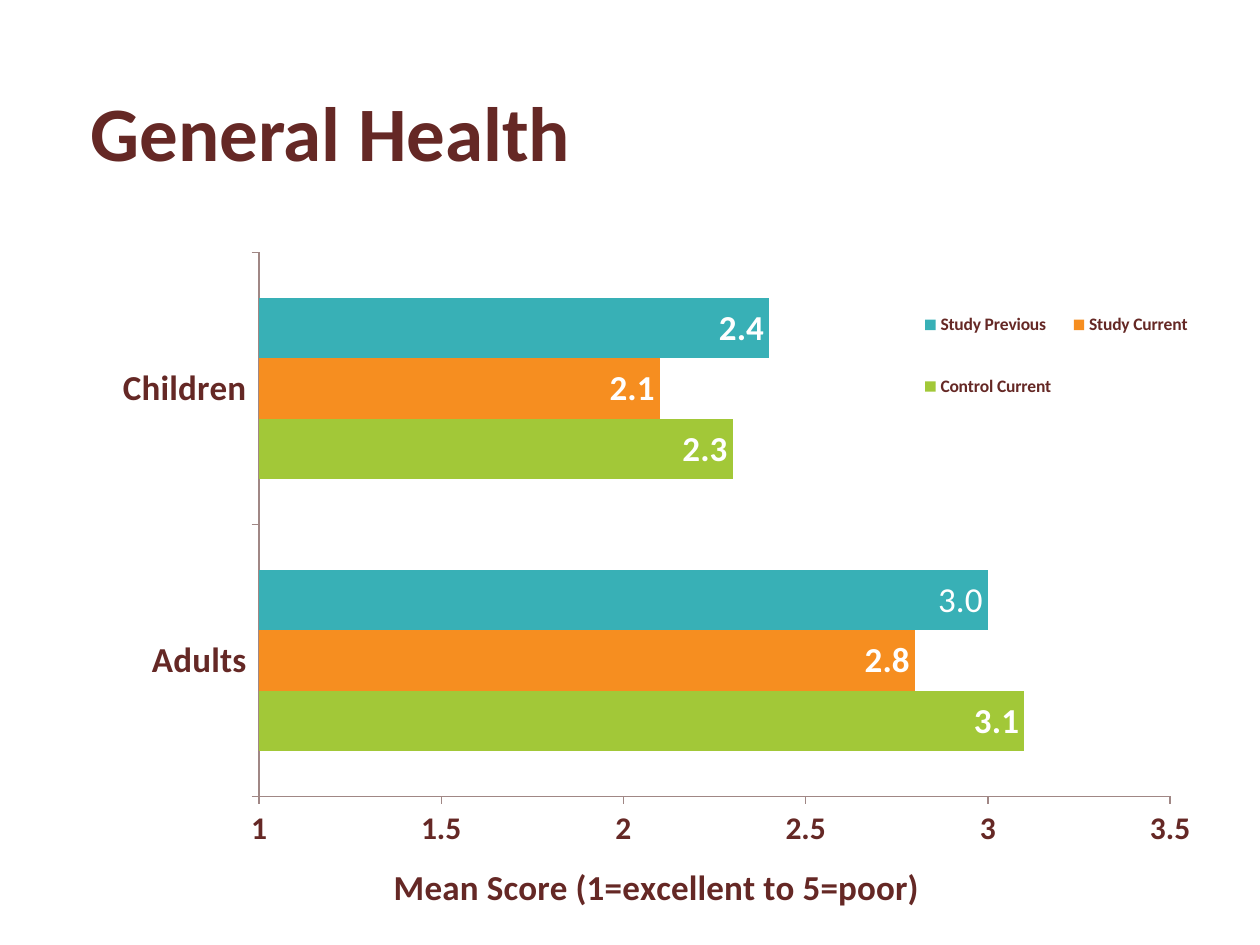
from pptx import Presentation
from pptx.chart.data import CategoryChartData
from pptx.dml.color import RGBColor
from pptx.enum import chart as c, text
from pptx.oxml import parse_xml
from pptx.oxml.ns import nsdecls, qn
from pptx.util import Cm, Pt

FONT = "Calibri"
COLORS = {
    "text": "652825",
    "axis": "A08785",
    "label": "FFFFFF",
    "Control Current": "A2C838",
    "Study Current": "F68E20",
    "Study Previous": "38B0B6",
}
SCORES = {
    "Control Current": (3.1, 2.3),
    "Study Current": (2.8, 2.1),
    "Study Previous": (3.0, 2.4),
}


def color(name):
    return RGBColor.from_string(COLORS[name])


def format_font(font, size, bold=True, color_name="text"):
    font.name = FONT
    font.size = Pt(size)
    font.bold = bold
    font.color.rgb = color(color_name)


def set_layout(element, index, x, y, width, height, inner=False):
    """Place a chart part by fractions of the chart's size."""
    for old in element.findall(qn("c:layout")):
        element.remove(old)
    target = '<c:layoutTarget val="inner"/>' if inner else ""
    element.insert(index, parse_xml(
        f'<c:layout {nsdecls("c")}><c:manualLayout>{target}'
        '<c:xMode val="edge"/><c:yMode val="edge"/>'
        f'<c:x val="{x}"/><c:y val="{y}"/><c:w val="{width}"/><c:h val="{height}"/>'
        '</c:manualLayout></c:layout>'))


def place_title(slide, left, top, width, height):
    title = slide.shapes.title
    title.left, title.top, title.width, title.height = left, top, width, height
    frame = title.text_frame
    frame.text = "General Health"
    frame.vertical_anchor = text.MSO_ANCHOR.BOTTOM
    paragraph = frame.paragraphs[0]
    paragraph.alignment = text.PP_ALIGN.LEFT
    paragraph.line_spacing = 0.9
    format_font(paragraph.runs[0].font, 44)


def format_axis(axis, size):
    axis.has_major_gridlines = False
    axis.major_tick_mark = c.XL_TICK_MARK.OUTSIDE
    axis.format.line.color.rgb = color("axis")
    axis.format.line.width = Pt(0.75)
    format_font(axis.tick_labels.font, size)


def format_series(series):
    series.format.fill.solid()
    series.format.fill.fore_color.rgb = color(series.name)
    series.invert_if_negative = False
    labels = series.data_labels
    labels.show_value = True
    labels.position = c.XL_LABEL_POSITION.INSIDE_END
    format_font(labels.font, 20, color_name="label")


def add_score_chart(slide, left, top, width, height):
    data = CategoryChartData()
    data.categories = ["Adults", "Children"]
    for name, values in SCORES.items():
        data.add_series(name, values)
    chart = slide.shapes.add_chart(
        c.XL_CHART_TYPE.BAR_CLUSTERED, left, top, width, height, data).chart
    chart.has_title = False
    format_font(chart.font, 10, bold=False)

    plot = chart.plots[0]
    plot.gap_width = 150
    plot.overlap = 0
    plot.vary_by_categories = False
    for series in plot.series:
        format_series(series)
    adult_label = plot.series[-1].points[0].data_label
    adult_label.text_frame.text = "3.0"
    adult_label.position = c.XL_LABEL_POSITION.INSIDE_END
    run = adult_label.text_frame.paragraphs[0].runs[0]
    format_font(run.font, 20, bold=False, color_name="label")

    format_axis(chart.category_axis, 20)
    value_axis = chart.value_axis
    format_axis(value_axis, 18)
    value_axis.minimum_scale = 1
    value_axis.maximum_scale = 3.5
    value_axis.major_unit = 0.5
    axis_title = value_axis.axis_title.text_frame
    axis_title.text = "Mean Score (1=excellent to 5=poor)"
    format_font(axis_title.paragraphs[0].runs[0].font, 20)

    chart.has_legend = True
    legend = chart.legend
    legend.position = c.XL_LEGEND_POSITION.RIGHT
    legend.include_in_layout = False
    format_font(legend.font, 10)

    plot_area = chart.element.find(".//" + qn("c:plotArea"))
    set_layout(plot_area, 0, 0.16, 0.03, 0.8, 0.79, inner=True)
    legend_element = chart.element.find(".//" + qn("c:legend"))
    set_layout(legend_element, 1, 0.73, 0.06, 0.26, 0.24)


def main():
    presentation = Presentation()
    presentation.slide_width, presentation.slide_height = Cm(25.4), Cm(19.05)
    slide = presentation.slides.add_slide(presentation.slide_layouts[5])
    place_title(slide, Cm(1.57), Cm(0.53), Cm(20.32), Cm(3.18))
    add_score_chart(slide, Cm(1.55), Cm(4.67), Cm(22.96), Cm(13.89))
    presentation.save("out.pptx")


if __name__ == "__main__":
    main()
